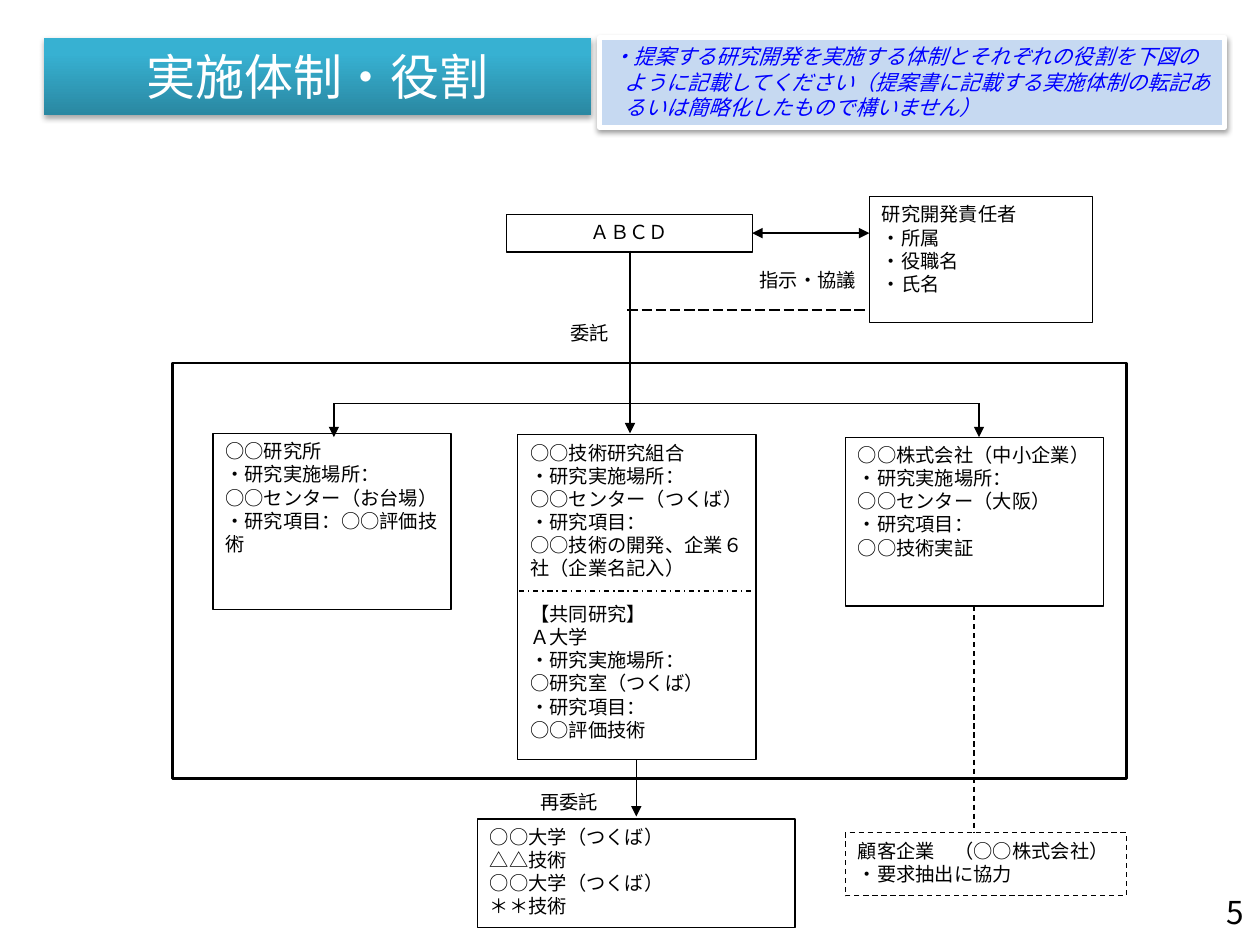
"""Builds a slide showing the project's organisation and the role of each party."""
from dataclasses import dataclass
from typing import Optional

from lxml.etree import SubElement
from pptx import Presentation
from pptx.dml.color import RGBColor
from pptx.enum.dml import MSO_LINE as Dash
from pptx.enum.shapes import MSO_CONNECTOR as Connector, MSO_SHAPE as Preset
from pptx.enum.text import MSO_ANCHOR as Anchor, PP_ALIGN as Align
from pptx.oxml.ns import qn
from pptx.util import Emu, Inches, Pt


@dataclass(frozen=True)
class Theme:
    ink: str = "000000"
    paper: str = "FFFFFF"
    note_fill: str = "C6D9F1"
    note_ink: str = "0000FF"
    title_bottom: str = "2A88A2"
    title_top: str = "37B1D2"
    body_font: str = "Noto Sans CJK JP"
    latin_font: str = "Calibri"
    title_size: float = 28
    number_size: float = 18
    note_size: float = 12
    body_size: float = 11
    thin: float = 0.75
    frame: float = 1.5
    note_border: float = 3
    section_gap: float = 13


THEME = Theme()


@dataclass(frozen=True)
class TextStyle:
    size: float = THEME.body_size
    font: str = THEME.body_font
    color: str = THEME.ink
    italic: bool = False
    align: Align = Align.LEFT


@dataclass(frozen=True)
class Box:
    left: float
    top: float
    width: float
    height: float
    lines: tuple = ()
    style: TextStyle = TextStyle()
    fill: Optional[str] = THEME.paper
    border: Optional[float] = THEME.thin
    border_color: str = THEME.ink
    dash: Optional[Dash] = None
    anchor: Anchor = Anchor.TOP
    section: str = ""
    tab: float = 0


@dataclass(frozen=True)
class Link:
    start: tuple
    end: tuple
    dash: Optional[Dash] = None
    arrows: tuple = ()


@dataclass(frozen=True)
class Label:
    left: float
    top: float
    width: float
    height: float
    text: str
    style: TextStyle = TextStyle()
    inset: bool = True


BODY = TextStyle()
CENTERED = TextStyle(align=Align.CENTER)
LATIN = TextStyle(font=THEME.latin_font)
TITLE = Box(0.35, 0.3, 4.34, 0.61, ("実施体制・役割",),
            TextStyle(THEME.title_size, THEME.latin_font, THEME.paper, align=Align.CENTER),
            fill=None, border=None, anchor=Anchor.MIDDLE)
NOTE = Box(4.76, 0.3, 4.96, 0.71,
           ("・提案する研究開発を実施する体制とそれぞれの役割を下図のように記載してください"
            "（提案書に記載する実施体制の転記あるいは簡略化したもので構いません）",),
           TextStyle(THEME.note_size, THEME.latin_font, THEME.note_ink, italic=True),
           fill=THEME.note_fill, border=THEME.note_border, border_color=THEME.paper)
PLACE, TOPIC = "・研究実施場所：", "・研究項目："
JOINT = "【共同研究】"
BOXES = (
    Box(4.02, 1.7, 1.95, 0.3, ("ＡＢＣＤ",), CENTERED),
    Box(6.9, 1.56, 1.77, 1, ("研究開発責任者", "・所属\t", "・役職名\t", "・氏名\t"), tab=1.38),
    Box(1.69, 3.44, 1.89, 1.4,
        ("○○研究所", PLACE, "○○センター（お台場）", TOPIC + "○○評価技術")),
    Box(4.11, 3.45, 1.89, 2.58,
        ("○○技術研究組合", PLACE, "○○センター（つくば）", TOPIC,
         "○○技術の開発、企業６社（企業名記入）", JOINT, "Ａ大学", PLACE,
         "○研究室（つくば）", TOPIC, "○○評価技術"), section=JOINT),
    Box(6.71, 3.47, 2.05, 1.34,
        ("○○株式会社（中小企業）", PLACE, "○○センター（大阪）", TOPIC, "○○技術実証")),
    Box(1.37, 2.88, 7.57, 3.3, fill=None, border=THEME.frame),
    Box(3.79, 6.5, 2.52, 0.86,
        ("○○大学（つくば）", "△△技術", "○○大学（つくば）", "＊＊技術")),
    Box(6.71, 6.61, 2.23, 0.5, ("顧客企業　（○○株式会社）", "・要求抽出に協力"), dash=Dash.DASH),
)
LINKS = (
    Link((4.12, 4.69), (6.02, 4.69), Dash.DASH_DOT),
    Link((5.05, 6.03), (5.05, 6.48), arrows=("tailEnd",)),
    Link((5, 1.99), (5, 3.44), arrows=("tailEnd",)),
    Link((2.65, 3.2), (7.77, 3.2)),
    Link((2.65, 3.2), (2.65, 3.47), arrows=("tailEnd",)),
    Link((7.77, 3.2), (7.77, 3.47), arrows=("tailEnd",)),
    Link((5.97, 1.85), (6.9, 1.85), arrows=("headEnd", "tailEnd")),
    Link((4.98, 2.46), (6.88, 2.46), Dash.LONG_DASH),
    Link((7.73, 4.81), (7.73, 6.61), Dash.DASH),
)
LABELS = (
    Label(5.93, 2.08, 1.02, 0.33, "指示・協議"),
    Label(4.43, 2.5, 0.51, 0.29, "委託", LATIN),
    Label(4.19, 6.22, 0.66, 0.29, "再委託", LATIN),
    Label(9.29, 7.11, 0.58, 0.25, "5",
          TextStyle(THEME.number_size, align=Align.RIGHT), inset=False),
)


def place(item) -> tuple:
    """Return the position and size of an item as lengths."""
    return tuple(Inches(value) for value in (item.left, item.top, item.width, item.height))


def add_run(paragraph, text: str, style: TextStyle, underline: bool = False) -> None:
    """Add one styled run, using the font for Latin and East Asian text alike."""
    run = paragraph.add_run()
    run.text = text
    font = run.font
    font.size, font.name, font.italic = Pt(style.size), style.font, style.italic
    font.color.rgb = RGBColor.from_string(style.color)
    if underline:
        font.underline = True
    SubElement(run._r.get_or_add_rPr(), qn("a:ea"), typeface=style.font)


def add_box(slide, box: Box):
    """Draw a rectangle with one paragraph for each line of text."""
    shape = slide.shapes.add_shape(Preset.RECTANGLE, *place(box))
    shape.shadow.inherit = False
    if box.fill:
        shape.fill.solid()
        shape.fill.fore_color.rgb = RGBColor.from_string(box.fill)
    else:
        shape.fill.background()
    if box.border:
        shape.line.color.rgb = RGBColor.from_string(box.border_color)
        shape.line.width = Pt(box.border)
        if box.dash:
            shape.line.dash_style = box.dash
    else:
        shape.line.fill.background()
    frame = shape.text_frame
    frame.word_wrap, frame.vertical_anchor = True, box.anchor
    for index, line in enumerate(box.lines):
        paragraph = frame.add_paragraph() if index else frame.paragraphs[0]
        paragraph.alignment = box.style.align
        if line == box.section:
            paragraph.space_before = Pt(THEME.section_gap)
        text, blank, _ = line.partition("\t")
        add_run(paragraph, text, box.style)
        if blank:
            stops = SubElement(paragraph._p.get_or_add_pPr(), qn("a:tabLst"))
            SubElement(stops, qn("a:tab"), pos=str(Inches(box.tab)), algn="l")
            add_run(paragraph, blank, box.style, underline=True)
    return shape


def add_shadow(shape, opacity: int, distance: float) -> None:
    """Cast a soft black shadow straight down."""
    effects = shape._element.spPr.find(qn("a:effectLst"))
    shadow = SubElement(effects, qn("a:outerShdw"), blurRad=str(Pt(3.1)),
                        dist=str(Pt(distance)), dir="5400000", rotWithShape="0")
    color = SubElement(shadow, qn("a:srgbClr"), val=THEME.ink)
    SubElement(color, qn("a:alpha"), val=str(opacity * 1000))


def add_header(slide) -> None:
    """Draw the gradient title and the note beside it."""
    title = add_box(slide, TITLE)
    title.fill.gradient()
    title.fill.gradient_angle = 90
    stops = ((0, THEME.title_bottom), (0.8, THEME.title_top))
    for stop, (position, color) in zip(title.fill.gradient_stops, stops):
        stop.position, stop.color.rgb = position, RGBColor.from_string(color)
    add_shadow(title, 35, 1.8)
    note = add_box(slide, NOTE)
    properties = note.text_frame.paragraphs[0]._p.get_or_add_pPr()
    properties.set("marL", str(Inches(0.1)))
    properties.set("indent", str(Emu(-Inches(0.1))))
    add_shadow(note, 38, 1.6)


def add_link(slide, link: Link) -> None:
    """Draw a straight line with its dash and arrowheads."""
    ends = [Inches(value) for value in link.start + link.end]
    connector = slide.shapes.add_connector(Connector.STRAIGHT, *ends)
    connector.line.color.rgb = RGBColor.from_string(THEME.ink)
    connector.line.width = Pt(THEME.thin)
    if link.dash:
        connector.line.dash_style = link.dash
    for arrow in link.arrows:
        SubElement(connector.line._get_or_add_ln(), qn(f"a:{arrow}"), type="triangle")
    SubElement(connector._element.spPr, qn("a:effectLst"))


def add_label(slide, label: Label) -> None:
    """Write one free-standing line of text."""
    frame = slide.shapes.add_textbox(*place(label)).text_frame
    frame.word_wrap = False
    if not label.inset:
        frame.margin_left = frame.margin_right = frame.margin_top = frame.margin_bottom = 0
        frame.vertical_anchor = Anchor.MIDDLE
    paragraph = frame.paragraphs[0]
    paragraph.alignment = label.style.align
    add_run(paragraph, label.text, label.style)


def main() -> None:
    """Build and save the presentation."""
    presentation = Presentation()
    presentation.slide_width, presentation.slide_height = Inches(10), Inches(7.5)
    slide = presentation.slides.add_slide(presentation.slide_layouts[6])
    add_header(slide)
    for add, items in ((add_box, BOXES), (add_link, LINKS), (add_label, LABELS)):
        for item in items:
            add(slide, item)
    presentation.save("out.pptx")


if __name__ == "__main__":
    main()
